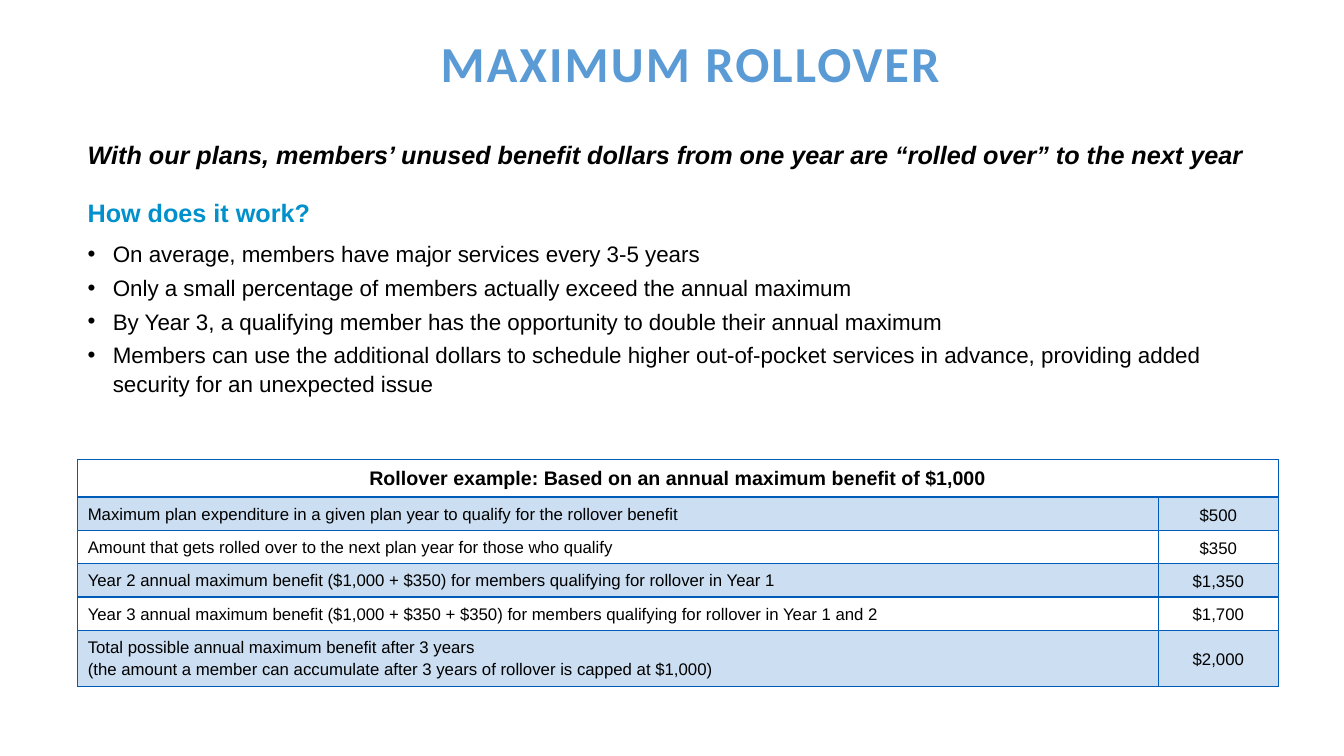
from dataclasses import dataclass

from lxml.etree import SubElement
from pptx import Presentation
from pptx.dml.color import RGBColor as Color
from pptx.enum.text import MSO_ANCHOR as Anchor, PP_ALIGN as Align
from pptx.oxml import parse_xml
from pptx.oxml.ns import nsdecls, qn
from pptx.util import Pt


@dataclass(frozen=True)
class Theme:
    """Colours, fonts and type sizes of the slide."""
    title: str = "5B9BD5"
    heading: str = "0091CC"
    text: str = "000000"
    table: str = "005CB9"
    tint: int = 20
    title_font: str = "Calibri"
    body_font: str = "Arial"
    title_size: int = 36
    lead_size: int = 18
    bullet_size: int = 16
    header_size: int = 14
    cell_size: int = 12


class SlideBuilder:
    """Draws styled elements on one slide."""

    def __init__(self, page, theme):
        self.page = page
        self.theme = theme

    def box(self, left, top, width, height, anchor=Anchor.TOP):
        """Add a wrapping text box and return its frame."""
        frame = self.page.shapes.add_textbox(Pt(left), Pt(top), Pt(width), Pt(height)).text_frame
        frame.word_wrap = True
        frame.vertical_anchor = anchor
        return frame

    def span(self, para, text, size, color=None, font=None, bold=False, italic=False, spacing=0):
        """Add one styled run to a paragraph."""
        span = para.add_run()
        span.text = text
        span.font.size = Pt(size)
        span.font.name = font or self.theme.body_font
        span.font.bold = bold
        span.font.italic = italic
        span.font.color.rgb = Color.from_string(color or self.theme.text)
        if spacing:
            span.font._element.set("spc", str(int(spacing * 100)))

    def bullet(self, frame, text):
        """Add a bulleted paragraph to a frame."""
        para = frame.add_paragraph()
        properties = para._p.get_or_add_pPr()
        properties.set("marL", str(Pt(18)))
        properties.set("indent", str(-Pt(18)))
        SubElement(properties, qn("a:buFont"), typeface=self.theme.body_font)
        SubElement(properties, qn("a:buChar"), char="•")
        para.line_spacing = 1.05
        para.space_before = Pt(4)
        self.span(para, text, self.theme.bullet_size)

    def cell(self, cell, lines, size, align, anchor, shaded, top, bottom, bold=False):
        """Fill one table cell with text, shading and borders."""
        cell.vertical_anchor = anchor
        for index, line in enumerate(lines):
            para = cell.text_frame.add_paragraph() if index else cell.text_frame.paragraphs[0]
            para.alignment = align
            para.line_spacing = 1.15
            self.span(para, line, size, bold=bold)
        properties = cell._tc.get_or_add_tcPr()
        if shaded:
            cell.fill.solid()
            cell.fill.fore_color.rgb = Color.from_string(self.theme.table)
            SubElement(properties.find(".//" + qn("a:srgbClr")), qn("a:alpha"),
                       val=str(self.theme.tint * 1000))
        else:
            cell.fill.background()
        for index, (side, width) in enumerate((("L", 1), ("R", 1), ("T", top), ("B", bottom))):
            properties.insert(index, parse_xml(
                f'<a:ln{side} {nsdecls("a")} w="{Pt(width)}"><a:solidFill>'
                f'<a:srgbClr val="{self.theme.table}"/></a:solidFill></a:ln{side}>'))

    def table(self, left, top, widths, heights, header, rows):
        """Add a table with a merged header and alternating shading."""
        table = self.page.shapes.add_table(len(heights), len(widths), Pt(left), Pt(top),
                                           Pt(sum(widths)), Pt(sum(heights))).table
        table.first_row = table.horz_banding = False
        for column, width in zip(table.columns, widths):
            column.width = Pt(width)
        for row, height in zip(table.rows, heights):
            row.height = Pt(height)
        table.cell(0, 0).merge(table.cell(0, 1))
        for column, lines in enumerate(([header], [])):
            self.cell(table.cell(0, column), lines, self.theme.header_size,
                      Align.CENTER, Anchor.TOP, False, 1, 2, bold=True)
        for index, (label, amount) in enumerate(rows, 1):
            edges = (index % 2 == 1, 2 if index == 1 else 1, 1)
            self.cell(table.cell(index, 0), label, self.theme.cell_size,
                      Align.LEFT, Anchor.TOP, *edges)
            self.cell(table.cell(index, 1), [amount], self.theme.cell_size,
                      Align.CENTER, Anchor.MIDDLE, *edges)


BULLETS = (
    "On average, members have major services every 3-5 years",
    "Only a small percentage of members actually exceed the annual maximum",
    "By Year 3, a qualifying member has the opportunity to double their annual maximum",
    "Members can use the additional dollars to schedule higher out-of-pocket services in advance, "
    "providing added security for an unexpected issue",
)
ROLLOVER_ROWS = (
    (["Maximum plan expenditure in a given plan year to qualify for the rollover benefit"], "$500"),
    (["Amount that gets rolled over to the next plan year for those who qualify"], "$350"),
    (["Year 2 annual maximum benefit ($1,000 + $350) for members qualifying for rollover in Year 1"],
     "$1,350"),
    (["Year 3 annual maximum benefit ($1,000 + $350 + $350) for members qualifying for rollover "
      "in Year 1 and 2"], "$1,700"),
    (["Total possible annual maximum benefit after 3 years",
      "(the amount a member can accumulate after 3 years of rollover is capped at $1,000)"], "$2,000"),
)


def main():
    """Build and save the slide."""
    deck = Presentation()
    deck.slide_width, deck.slide_height = Pt(960), Pt(540)
    theme = Theme()
    slide = SlideBuilder(deck.slides.add_slide(deck.slide_layouts[6]), theme)
    left, width = 55.5, 857.5

    title = slide.box(84.2, 15.1, 818, 64, Anchor.MIDDLE).paragraphs[0]
    title.alignment = Align.CENTER
    title.line_spacing = 0.9
    slide.span(title, "MAXIMUM ROLLOVER", theme.title_size, theme.title, theme.title_font,
               bold=True, spacing=1.5)

    lead = slide.box(left, 95.8, width, 29).paragraphs[0]
    slide.span(lead, "With our plans, members’ unused benefit dollars from one year are "
               "“rolled over” to the next year", theme.lead_size, bold=True, italic=True)

    body = slide.box(left, 139.7, width, 171.4)
    heading = body.paragraphs[0]
    heading.line_spacing = 0.9
    heading.space_after = Pt(4)
    slide.span(heading, "How does it work?", theme.lead_size, theme.heading, bold=True)
    for text in BULLETS:
        slide.bullet(body, text)

    slide.table(left, 328.3, (772, 85.5), (26.8, *[23.7] * 4, 40.3),
                "Rollover example: Based on an annual maximum benefit of $1,000", ROLLOVER_ROWS)
    deck.save("out.pptx")


if __name__ == "__main__":
    main()
